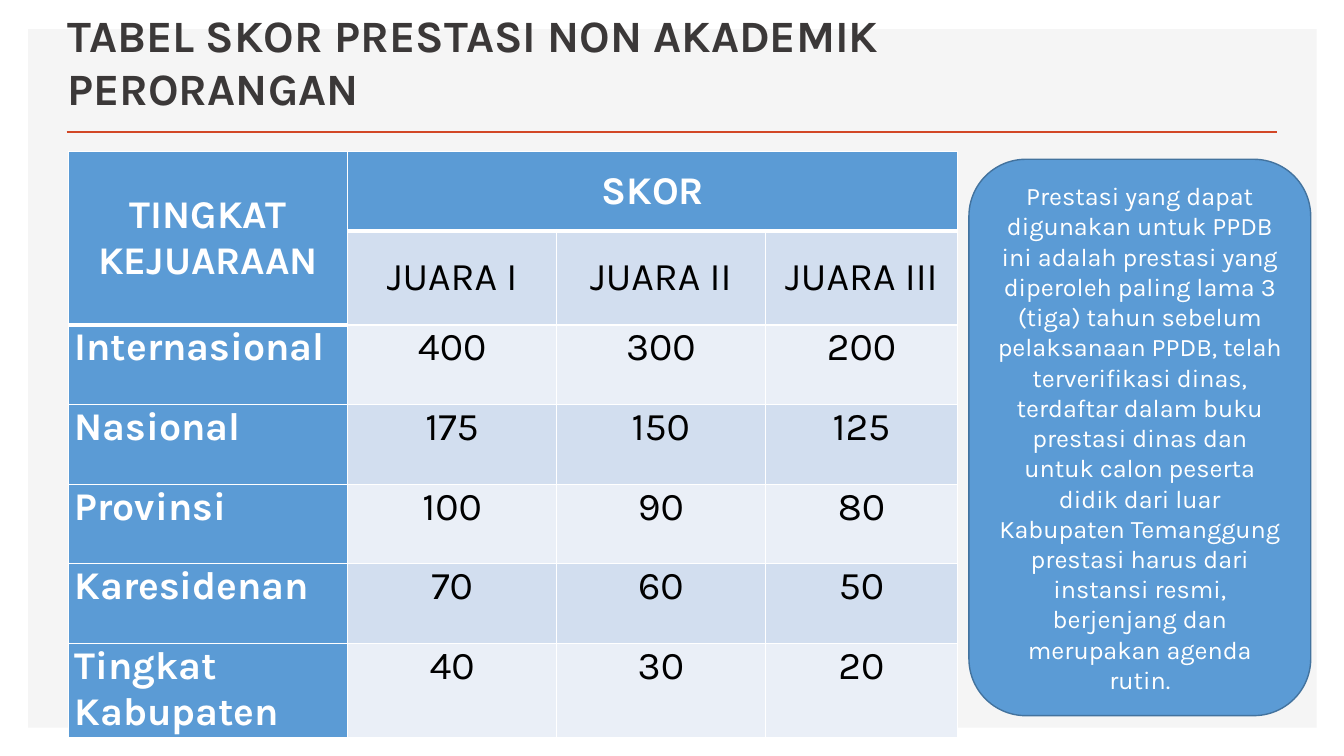
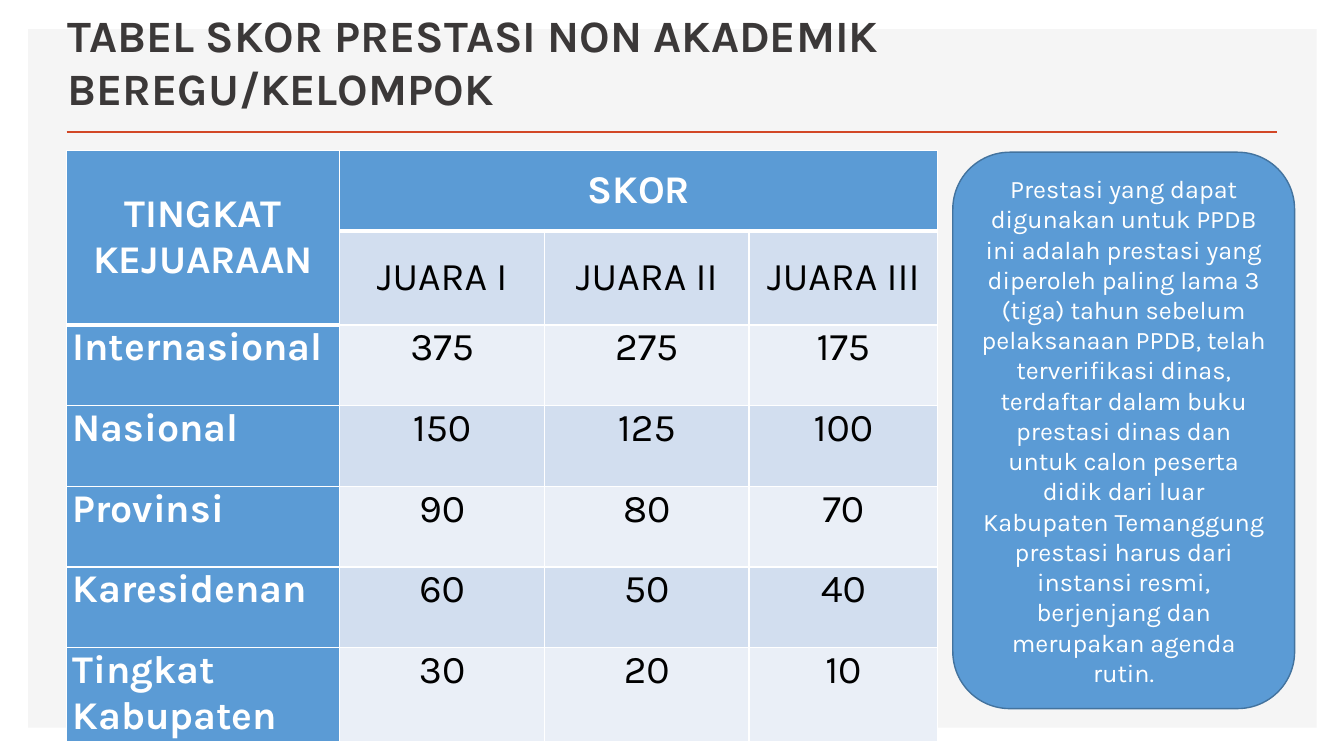
from lxml.etree import SubElement
from pptx import Presentation
from pptx.dml.color import RGBColor
from pptx.enum.shapes import MSO_CONNECTOR, MSO_SHAPE
from pptx.enum.text import MSO_ANCHOR, PP_ALIGN
from pptx.oxml.ns import qn
from pptx.util import Inches, Pt

# Shared style
FONT = "Karla"
WHITE = RGBColor(0xFF, 0xFF, 0xFF)
BLACK = RGBColor(0x00, 0x00, 0x00)
PANEL_GREY = RGBColor(0xF5, 0xF5, 0xF5)
RULE_RED = RGBColor(0xD2, 0x47, 0x26)
TITLE_GREY = RGBColor(0x3B, 0x38, 0x38)
BLUE = RGBColor(0x5B, 0x9B, 0xD5)
DARK_BLUE = RGBColor(0x43, 0x73, 0x9E)
BAND_DARK = RGBColor(0xD2, 0xDE, 0xEF)
BAND_LIGHT = RGBColor(0xEA, 0xEF, 0xF7)
THIN, THICK = Pt(1), Pt(3)

# Shared wording
LEVELS = ["Internasional", "Nasional", "Provinsi", "Karesidenan", "Tingkat Kabupaten"]
RANKS = ["JUARA I", "JUARA II", "JUARA III"]
NOTE = (
    "Prestasi yang dapat digunakan untuk PPDB ini adalah prestasi yang diperoleh "
    "paling lama 3 (tiga) tahun sebelum pelaksanaan PPDB, telah terverifikasi dinas, "
    "terdaftar dalam buku prestasi dinas dan untuk calon peserta didik dari luar "
    "Kabupaten Temanggung prestasi harus dari instansi resmi, berjenjang dan "
    "merupakan agenda rutin."
)

# What differs from slide to slide
SLIDES = [
    {
        "title": "TABEL SKOR PRESTASI NON AKADEMIK PERORANGAN",
        "title_width": 10.47,
        "table_at": (0.68, 1.5),
        "columns": [2.77, 2.07, 2.07, 1.91],
        "row_height": 0.79,
        "scores": [(400, 300, 200), (175, 150, 125), (100, 90, 80), (70, 60, 50), (40, 30, 20)],
        "note_at": (9.61, 1.58),
    },
    {
        "title": "TABEL SKOR PRESTASI NON AKADEMIK BEREGU/KELOMPOK",
        "title_width": 12.08,
        "table_at": (0.66, 1.49),
        "columns": [2.71, 2.03, 2.03, 1.87],
        "row_height": 0.8,
        "scores": [(375, 275, 175), (150, 125, 100), (90, 80, 70), (60, 50, 40), (30, 20, 10)],
        "note_at": (9.45, 1.51),
    },
]


def add_text(text_frame, text, size, color, bold=False, align=PP_ALIGN.LEFT):
    paragraph = text_frame.paragraphs[0]
    paragraph.alignment = align
    run = paragraph.add_run()
    run.text = text
    run.font.name = FONT
    run.font.size = Pt(size)
    run.font.bold = bold
    run.font.color.rgb = color


def add_filled_shape(slide, kind, left, top, width, height, fill, line=None):
    shape = slide.shapes.add_shape(
        kind, Inches(left), Inches(top), Inches(width), Inches(height))
    shape.shadow.inherit = False
    shape.fill.solid()
    shape.fill.fore_color.rgb = fill
    if line is None:
        shape.line.fill.background()
    else:
        shape.line.color.rgb = line
        shape.line.width = THIN
    return shape


def add_frame(slide):
    """Grey panel with the red rule below the title."""
    add_filled_shape(slide, MSO_SHAPE.RECTANGLE, 0.28, 0.29, 12.78, 6.93, PANEL_GREY)
    rule = slide.shapes.add_connector(
        MSO_CONNECTOR.STRAIGHT, Inches(0.66), Inches(1.31), Inches(12.67), Inches(1.31))
    rule.line.color.rgb = RULE_RED
    rule.line.width = Pt(2)
    SubElement(rule._element.spPr, qn("a:effectLst"))


def add_title(slide, text, width):
    box = slide.shapes.add_textbox(Inches(0.57), Inches(0.49), Inches(width), Inches(0.7))
    box.text_frame.word_wrap = True
    box.text_frame.vertical_anchor = MSO_ANCHOR.BOTTOM
    add_text(box.text_frame, text, 32, TITLE_GREY, bold=True)


def set_borders(cell, top, bottom):
    properties = cell._tc.get_or_add_tcPr()
    for side, width in (("L", THIN), ("R", THIN), ("T", top), ("B", bottom)):
        line = SubElement(properties, qn(f"a:ln{side}"), w=str(width))
        fill = SubElement(line, qn("a:solidFill"))
        SubElement(fill, qn("a:srgbClr"), val=str(WHITE))


def style_cell(cell, row, column):
    # The heavy line runs below SKOR and below the two-row corner cell
    last_header_row = 1 if column == 0 else 0
    set_borders(
        cell,
        top=THICK if row == last_header_row + 1 else THIN,
        bottom=THICK if row == last_header_row or (row, column) == (0, 0) else THIN,
    )
    is_heading = row == 0 or column == 0
    band = BAND_DARK if row % 2 else BAND_LIGHT
    cell.fill.solid()
    cell.fill.fore_color.rgb = BLUE if is_heading else band
    cell.margin_left = cell.margin_right = Inches(0.06)
    cell.margin_top = cell.margin_bottom = 0
    cell.vertical_anchor = MSO_ANCHOR.MIDDLE if row < 2 else MSO_ANCHOR.TOP
    return is_heading


def add_score_table(slide, position, columns, row_height, scores):
    rows = [["TINGKAT KEJUARAAN", "SKOR", "", ""], ["", *RANKS]]
    rows += [[level, *map(str, values)] for level, values in zip(LEVELS, scores)]
    left, top = position
    table = slide.shapes.add_table(
        len(rows), len(columns), Inches(left), Inches(top),
        Inches(sum(columns)), Inches(row_height * len(rows))).table
    for column, width in zip(table.columns, columns):
        column.width = Inches(width)
    for row in table.rows:
        row.height = Inches(row_height)
    table.cell(0, 0).merge(table.cell(1, 0))
    table.cell(0, 1).merge(table.cell(0, 3))

    for row, texts in enumerate(rows):
        for column, text in enumerate(texts):
            cell = table.cell(row, column)
            is_heading = style_cell(cell, row, column)
            if text:
                is_level = row > 1 and column == 0
                add_text(
                    cell.text_frame, text, 28, WHITE if is_heading else BLACK,
                    bold=is_heading,
                    align=PP_ALIGN.LEFT if is_level else PP_ALIGN.CENTER)


def add_note(slide, position):
    shape = add_filled_shape(
        slide, MSO_SHAPE.ROUNDED_RECTANGLE, *position, 3.39, 5.52, BLUE, DARK_BLUE)
    shape.text_frame.word_wrap = True
    shape.text_frame.vertical_anchor = MSO_ANCHOR.MIDDLE
    add_text(shape.text_frame, NOTE, 18, WHITE, align=PP_ALIGN.CENTER)


def main():
    presentation = Presentation()
    presentation.slide_width = Inches(13.33)
    presentation.slide_height = Inches(7.5)
    for content in SLIDES:
        slide = presentation.slides.add_slide(presentation.slide_layouts[6])
        add_frame(slide)
        add_title(slide, content["title"], content["title_width"])
        add_score_table(slide, content["table_at"], content["columns"],
                        content["row_height"], content["scores"])
        add_note(slide, content["note_at"])
    presentation.save("out.pptx")


if __name__ == "__main__":
    main()
